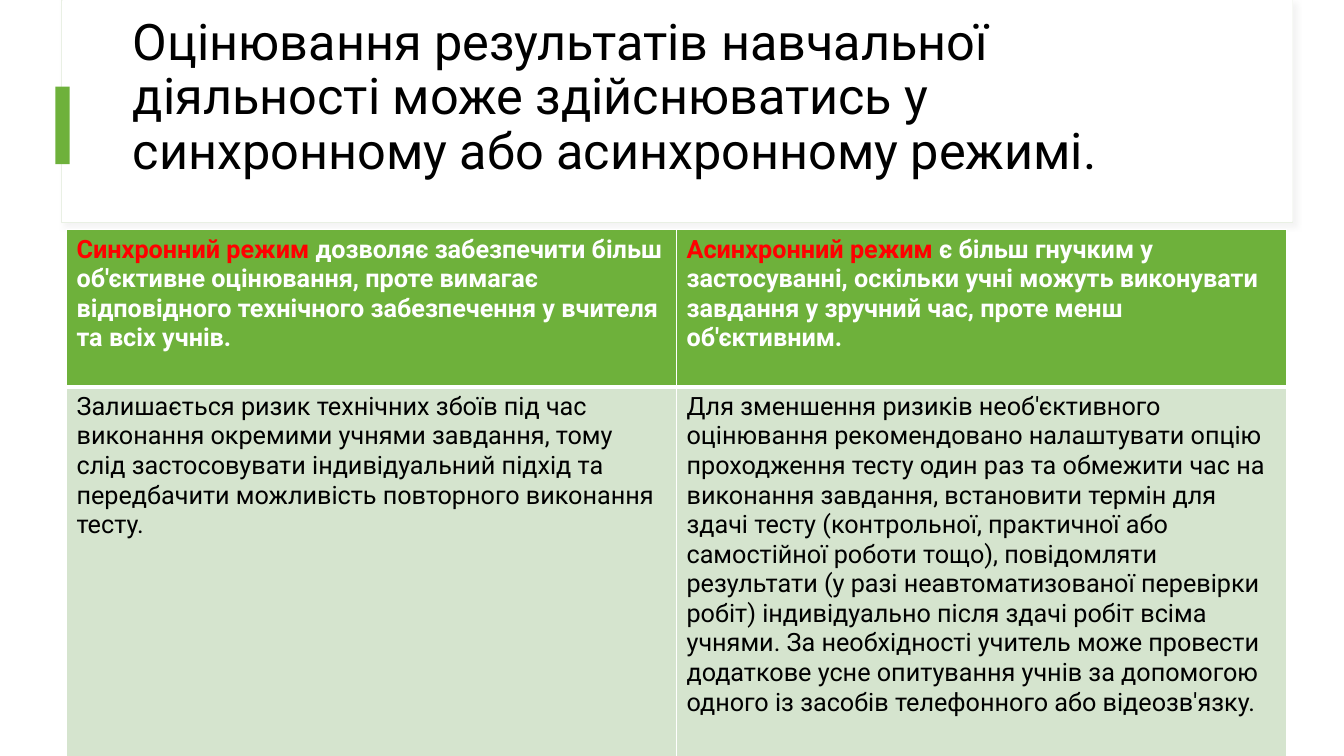
from lxml.etree import SubElement
from pptx import Presentation
from pptx.dml.color import RGBColor
from pptx.enum.shapes import MSO_SHAPE as Preset
from pptx.enum.text import MSO_ANCHOR as Anchor
from pptx.oxml import parse_xml
from pptx.oxml.ns import nsdecls, qn
from pptx.util import Inches, Pt

WHITE = RGBColor(0xFF, 0xFF, 0xFF)
BLACK = RGBColor(0x00, 0x00, 0x00)
RED = RGBColor(0xFF, 0x00, 0x00)
GREEN = RGBColor(0x6E, 0xB1, 0x3B)
PALE_GREEN = RGBColor(0xD5, 0xE4, 0xCE)
PANEL_LINE = RGBColor(0xE9, 0xF0, 0xE4)
SHADOW = RGBColor(0xD9, 0xD9, 0xD9)

TITLE = ("Оцінювання результатів навчальної діяльності може здійснюватись "
         "у синхронному або асинхронному режимі.")
HEADERS = [
    [("Синхронний режим ", RED),
     ("дозволяє забезпечити більш об'єктивне оцінювання, проте вимагає "
      "відповідного технічного забезпечення у вчителя та всіх учнів.", WHITE)],
    [("Асинхронний режим ", RED),
     ("є більш гнучким у застосуванні, оскільки учні можуть виконувати "
      "завдання у зручний час, проте менш об'єктивним.", WHITE)],
]
DETAILS = [
    [("Залишається ризик технічних збоїв під час виконання окремими учнями "
      "завдання, тому слід застосовувати індивідуальний підхід та передбачити "
      "можливість повторного виконання тесту.", BLACK)],
    [("Для зменшення ризиків необ'єктивного оцінювання рекомендовано "
      "налаштувати опцію проходження тесту один раз та обмежити час на "
      "виконання завдання, встановити термін для здачі тесту (контрольної, "
      "практичної або самостійної роботи тощо), повідомляти результати "
      "(у разі неавтоматизованої перевірки робіт) індивідуально після здачі "
      "робіт всіма учнями. За необхідності учитель може провести додаткове "
      "усне опитування учнів за допомогою одного із засобів телефонного або "
      "відеозв'язку.", BLACK)],
]


class SlideBuilder:
    """Holds the style and the current slide, and adds each kind of element."""

    font = "Roboto"
    title_size = Pt(36)
    body_size = Pt(18)

    def __init__(self, page):
        self.page = page

    def rectangle(self, left, top, width, height, fill, line=None):
        shape = self.page.shapes.add_shape(
            Preset.RECTANGLE, Inches(left), Inches(top), Inches(width), Inches(height))
        shape.shadow.inherit = False
        shape.fill.solid()
        shape.fill.fore_color.rgb = fill
        if line is None:
            shape.line.fill.background()
        else:
            shape.line.color.rgb = line
            shape.line.width = Pt(0.75)
        return shape

    def soft_shadow(self, shape):
        effects = shape.element.spPr.find(qn("a:effectLst"))
        effects.append(parse_xml(
            f'<a:outerShdw {nsdecls("a")} blurRad="{Pt(4)}" dist="{Pt(3)}" '
            f'dir="{45 * 60000}"><a:srgbClr val="{SHADOW}">'
            f'<a:alpha val="30000"/></a:srgbClr></a:outerShdw>'))

    def title(self, left, top, width, height, text):
        box = self.page.shapes.add_textbox(
            Inches(left), Inches(top), Inches(width), Inches(height))
        frame = box.text_frame
        frame.word_wrap = True
        frame.vertical_anchor = Anchor.MIDDLE
        frame.margin_bottom = Inches(0.59)
        para = frame.paragraphs[0]
        para.text = text
        para.line_spacing = 0.9
        para.font.name = self.font
        para.font.size = self.title_size
        para.font.color.rgb = BLACK

    def table(self, left, top, column_width, row_heights, rows, fills):
        columns = len(rows[0])
        table = self.page.shapes.add_table(
            len(rows), columns, Inches(left), Inches(top),
            Inches(column_width * columns), Inches(sum(row_heights))).table
        for column in table.columns:
            column.width = Inches(column_width)
        for index, (height, row, fill) in enumerate(zip(row_heights, rows, fills)):
            table.rows[index].height = Inches(height)
            is_header = index == 0
            for column, spans in enumerate(row):
                cell = table.cell(index, column)
                self.cell_text(cell, spans, is_header)
                self.cell_borders(cell, 3 if is_header else 1)
                cell.fill.solid()
                cell.fill.fore_color.rgb = fill

    def cell_text(self, cell, spans, bold):
        para = cell.text_frame.paragraphs[0]
        para.font.name = self.font
        para.font.size = self.body_size
        para.font.bold = bold
        for text, color in spans:
            span = para.add_run()
            span.text = text
            span.font.color.rgb = color

    def cell_borders(self, cell, bottom_width):
        properties = cell._tc.get_or_add_tcPr()
        widths = {"lnL": 1, "lnR": 1, "lnT": 1, "lnB": bottom_width}
        for side, width in widths.items():
            border = SubElement(properties, qn(f"a:{side}"), w=str(Pt(width)))
            fill = SubElement(border, qn("a:solidFill"))
            SubElement(fill, qn("a:srgbClr"), val=str(WHITE))


def main():
    deck = Presentation()
    deck.slide_width = Inches(13.33)
    deck.slide_height = Inches(7.5)
    builder = SlideBuilder(deck.slides.add_slide(deck.slide_layouts[6]))

    panel = builder.rectangle(0.61, 0, 12.21, 2.21, WHITE, PANEL_LINE)
    builder.soft_shadow(panel)
    builder.rectangle(0.62, 0, 12.2, 2.2, WHITE)
    builder.rectangle(0.55, 0.86, 0.14, 0.77, GREEN)
    builder.title(1.22, 0.6, 11.12, 1.29, TITLE)
    builder.table(0.66, 2.28, 6.05, [1.56, 4.06], [HEADERS, DETAILS], [GREEN, PALE_GREEN])

    deck.save("out.pptx")


if __name__ == "__main__":
    main()
